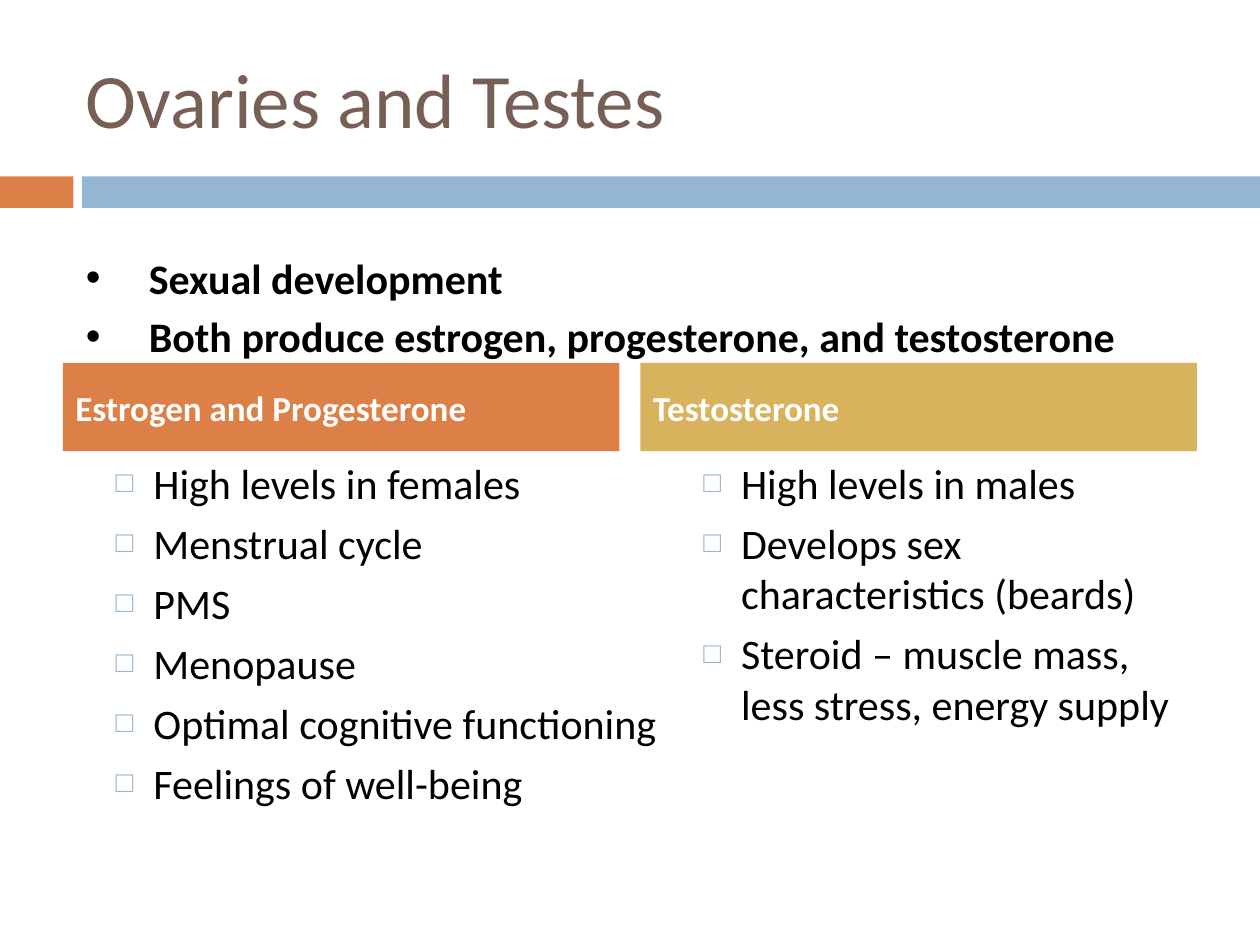
from lxml import etree
from pptx import Presentation
from pptx.dml.color import RGBColor
from pptx.enum.shapes import MSO_SHAPE
from pptx.enum.text import MSO_ANCHOR, PP_ALIGN
from pptx.oxml.ns import qn
from pptx.util import Pt

RECTANGLE = MSO_SHAPE.RECTANGLE
TOP, MIDDLE, BOTTOM = MSO_ANCHOR.TOP, MSO_ANCHOR.MIDDLE, MSO_ANCHOR.BOTTOM
LEFT = PP_ALIGN.LEFT

ORANGE = RGBColor(0xDD, 0x80, 0x47)
BLUE = RGBColor(0x94, 0xB6, 0xD2)
GOLD = RGBColor(0xD8, 0xB2, 0x5C)
BROWN = RGBColor(0x77, 0x5F, 0x55)
BLACK = RGBColor(0, 0, 0)
WHITE = RGBColor(0xFF, 0xFF, 0xFF)

FONT = "Calibri"
SLIDE_WIDTH, SLIDE_HEIGHT = 720, 540
HEADING_HEIGHT = 50.4
LIST_OUTDENT = 5.76

FEMALE_EFFECTS = [
    "High levels in females",
    "Menstrual cycle",
    "PMS",
    "Menopause",
    "Optimal cognitive functioning",
    "Feelings of well-being",
]
MALE_EFFECTS = [
    "High levels in males",
    "Develops sex characteristics (beards)",
    "Steroid – muscle mass, less stress, energy supply",
]
SHARED_EFFECTS = [
    "Sexual development",
    "Both produce estrogen, progesterone, and testosterone",
]


def add_bar(slide, left, top, width, height, color):
    bar = slide.shapes.add_shape(RECTANGLE, Pt(left), Pt(top), Pt(width), Pt(height))
    bar.shadow.inherit = False
    bar.fill.solid()
    bar.fill.fore_color.rgb = color
    bar.line.fill.background()
    return bar


def add_bullet(paragraph, char, margin, hanging, color=None, percent=100):
    properties = paragraph._p.get_or_add_pPr()
    properties.set("marL", str(Pt(margin)))
    properties.set("indent", str(-Pt(hanging)))
    if color is not None:
        bullet_color = etree.SubElement(properties, qn("a:buClr"))
        etree.SubElement(bullet_color, qn("a:srgbClr"), val=str(color))
    etree.SubElement(properties, qn("a:buSzPct"), val=str(percent * 1000))
    etree.SubElement(properties, qn("a:buFont"), typeface="Arial")
    etree.SubElement(properties, qn("a:buChar"), char=char)


def write(shape, lines, size, color, bold=False, anchor=TOP, space=0, bullet=None):
    frame = shape.text_frame
    frame.word_wrap = True
    frame.vertical_anchor = anchor
    for index, line in enumerate(lines):
        paragraph = frame.add_paragraph() if index else frame.paragraphs[0]
        paragraph.text = line
        paragraph.alignment = LEFT
        paragraph.space_before = Pt(space)
        if bullet:
            add_bullet(paragraph, **bullet)
        font = paragraph.font
        font.name = FONT
        font.size = Pt(size)
        font.bold = bold
        font.color.rgb = color


def add_text(slide, left, top, width, height, lines, size, color, **style):
    box = slide.shapes.add_textbox(Pt(left), Pt(top), Pt(width), Pt(height))
    write(box, lines, size, color, **style)


def add_title(slide, left, top, width, height):
    add_text(slide, left, top, width, height, ["Ovaries and Testes"], 44, BROWN,
             anchor=MIDDLE)


def add_divider(slide, left, top, width, height):
    accent_width, gap = 42, 4.8
    add_bar(slide, left, top, accent_width, height, ORANGE)
    band_offset = accent_width + gap
    add_bar(slide, left + band_offset, top, width - band_offset, height, BLUE)


def add_shared_effects(slide, left, top, width, height):
    add_text(slide, left, top, width, height, SHARED_EFFECTS, 24, BLACK, bold=True,
             anchor=BOTTOM, space=4.8, bullet=dict(char="•", margin=36, hanging=36))


def add_hormone_column(slide, left, top, width, height, hormone, color, effects,
                       outdent=0):
    heading = add_bar(slide, left, top, width, HEADING_HEIGHT, color)
    write(heading, [hormone], 20, WHITE, bold=True, anchor=MIDDLE, space=7)
    add_text(slide, left - outdent, top + HEADING_HEIGHT, width + 6.25 * outdent,
             height - HEADING_HEIGHT, effects, 24, BLACK, space=5.5,
             bullet=dict(char="□", margin=50.4, hanging=21.6, color=BLUE, percent=70))


def main():
    presentation = Presentation()
    presentation.slide_width = Pt(SLIDE_WIDTH)
    presentation.slide_height = Pt(SLIDE_HEIGHT)
    slide = presentation.slides.add_slide(presentation.slide_layouts[6])

    add_divider(slide, 0, 100.8, SLIDE_WIDTH, 18)
    add_title(slide, 42, 21.6, 642, 68.4)
    add_hormone_column(slide, 36, 207.4, 318, 314.6, "Estrogen and Progesterone",
                       ORANGE, FEMALE_EFFECTS, LIST_OUTDENT)
    add_hormone_column(slide, 366, 207.4, 318, 314.6, "Testosterone",
                       GOLD, MALE_EFFECTS)
    add_shared_effects(slide, 42, 138, 648, 72)

    presentation.save("out.pptx")


if __name__ == "__main__":
    main()
